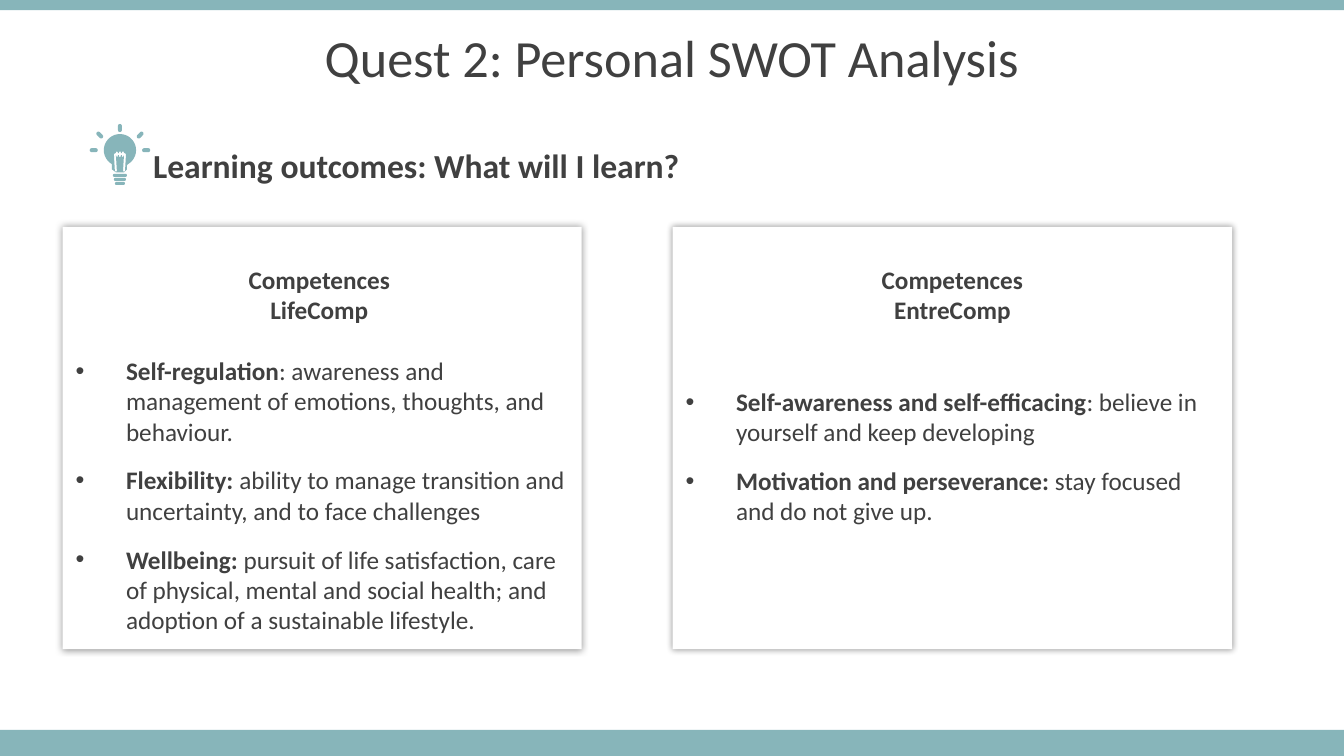
"""Build the learning outcomes slide of the personal SWOT analysis quest."""
from math import cos, radians, sin

from lxml.etree import SubElement
from pptx import Presentation
from pptx.dml.color import RGBColor
from pptx.enum.shapes import MSO_SHAPE as Preset
from pptx.enum.text import MSO_ANCHOR as Anchor, PP_ALIGN as Align
from pptx.oxml.ns import qn
from pptx.util import Inches, Pt

TEAL = RGBColor(0x87, 0xB5, 0xBA)
INK = RGBColor(0x40, 0x40, 0x40)
WHITE = RGBColor(0xFF, 0xFF, 0xFF)

LIFE_COMP = [
    ("Self-regulation", ": awareness and management of emotions, thoughts, and behaviour."),
    ("Flexibility: ", "ability to manage transition and uncertainty, and to face challenges"),
    ("Wellbeing: ", "pursuit of life satisfaction, care of physical, mental and social health; "
                    "and adoption of a sustainable lifestyle."),
]
ENTRE_COMP = [
    ("Self-awareness and self-efficacing", ": believe in yourself and keep developing"),
    ("Motivation and perseverance: ", "stay focused and do not give up."),
]

RAYS = [(0.93, 1.49, 0), (1.45, 1.49, 0), (1.19, 1.27, 90), (0.99, 1.34, 45), (1.39, 1.34, -45)]
SOCKET = [(1.74, 0.14), (1.78, 0.12), (1.82, 0.1)]
NECK = [(1.26, 1.64), (1.26, 1.68), (1.23, 1.71), (1.15, 1.71), (1.11, 1.68), (1.11, 1.64)]
FILAMENT = [
    (1.16, 1.5), (1.15, 1.51), (1.15, 1.52), (1.14, 1.52), (1.13, 1.53), (1.14, 1.7),
    (1.15, 1.7), (1.16, 1.7), (1.15, 1.54), (1.16, 1.56), (1.17, 1.55), (1.17, 1.54),
    (1.18, 1.54), (1.18, 1.55), (1.19, 1.56), (1.2, 1.55), (1.2, 1.54), (1.21, 1.54),
    (1.21, 1.55), (1.22, 1.56), (1.23, 1.54), (1.22, 1.7), (1.23, 1.7), (1.24, 1.7),
    (1.25, 1.53), (1.24, 1.52), (1.23, 1.52), (1.23, 1.51), (1.22, 1.5), (1.21, 1.51),
    (1.21, 1.52), (1.2, 1.52), (1.2, 1.51), (1.19, 1.5), (1.18, 1.51), (1.18, 1.52),
    (1.17, 1.52), (1.17, 1.51),
]


def arc(x, y, radius, start, end, step):
    return [(x + radius * cos(radians(a)), y + radius * sin(radians(a)))
            for a in range(start, end + 1, step)]


def capsule(x, y, length, thickness, angle):
    reach, radius = (length - thickness) / 2, thickness / 2
    dx, dy = reach * cos(radians(angle)), reach * sin(radians(angle))
    return (arc(x + dx, y + dy, radius, angle - 90, angle + 90, 30)
            + arc(x - dx, y - dy, radius, angle + 90, angle + 270, 30))


class QuestSlide:
    def __init__(self, slide):
        self.slide = slide
        self.font = "Calibri"

    def paint(self, shape, color):
        shape.shadow.inherit = False
        shape.fill.solid()
        shape.fill.fore_color.rgb = color
        shape.line.fill.background()
        return shape

    def block(self, left, top, width, height, color):
        block = self.slide.shapes.add_shape(
            Preset.RECTANGLE, Inches(left), Inches(top), Inches(width), Inches(height))
        return self.paint(block, color)

    def add_words(self, paragraph, text, size, bold=False):
        run = paragraph.add_run()
        run.text = text
        run.font.name, run.font.size, run.font.bold = self.font, Pt(size), bold
        run.font.color.rgb = INK

    def heading(self, left, top, width, height, text, size, before, bold=False):
        frame = self.slide.shapes.add_textbox(
            Inches(left), Inches(top), Inches(width), Inches(height)).text_frame
        frame.word_wrap = True
        frame.vertical_anchor = Anchor.MIDDLE
        paragraph = frame.paragraphs[0]
        paragraph.space_before = Pt(before)
        self.add_words(paragraph, text, size, bold)
        return paragraph

    def bulb(self):
        contours = [capsule(x, y, 0.08, 0.04, angle) for x, y, angle in RAYS]
        contours += [capsule(1.19, y, width, 0.03, 0) for y, width in SOCKET]
        contours += [arc(1.19, 1.49, 0.16, 120, 420, 10) + NECK, FILAMENT]
        outlines = [[(Inches(x), Inches(y)) for x, y in contour] for contour in contours]
        builder = self.slide.shapes.build_freeform(*outlines[0][0])
        for index, outline in enumerate(outlines):
            if index:
                builder.move_to(*outline[0])
            builder.add_line_segments(outline[1:], close=True)
        self.paint(builder.convert_to_shape(), TEAL)

    def halo(self, shape):
        effects = shape._element.spPr.find(qn("a:effectLst"))
        shadow = SubElement(effects, qn("a:outerShdw"), blurRad=str(Pt(5)), dist="0",
                            dir="0", algn="ctr", rotWithShape="0")
        black = SubElement(shadow, qn("a:srgbClr"), val="000000")
        SubElement(black, qn("a:alpha"), val="40000")

    def bullet(self, paragraph):
        props = paragraph._p.get_or_add_pPr()
        props.set("marL", str(Inches(0.5)))
        props.set("indent", str(Inches(-0.5)))
        SubElement(props, qn("a:buFont"), typeface="Arial")
        SubElement(props, qn("a:buChar"), char="•")

    def competences(self, left, width, titles, gap, outcomes):
        card = self.block(left, 2.25, width, 4.19, WHITE)
        self.halo(card)
        frame = card.text_frame
        frame.word_wrap = True
        frame.vertical_anchor = Anchor.TOP
        frame.margin_left = frame.margin_right = Inches(0.13)
        frame.margin_top, frame.margin_bottom = Inches(0.37), Inches(0.07)
        for index, title in enumerate(titles):
            paragraph = frame.add_paragraph() if index else frame.paragraphs[0]
            paragraph.alignment = Align.CENTER
            self.add_words(paragraph, title, 18, bold=True)
        paragraph.space_after = Pt(gap)
        for term, meaning in outcomes:
            paragraph = frame.add_paragraph()
            paragraph.alignment = Align.LEFT
            paragraph.space_after = Pt(13.3)
            self.bullet(paragraph)
            self.add_words(paragraph, term, 18, bold=True)
            self.add_words(paragraph, meaning, 18)


def main():
    deck = Presentation()
    deck.slide_width, deck.slide_height = Inches(13.33), Inches(7.5)
    quest = QuestSlide(deck.slides.add_slide(deck.slide_layouts[6]))
    quest.block(0, 7.24, 13.33, 0.26, TEAL)
    quest.block(0, 0, 13.33, 0.1, TEAL)
    title = quest.heading(0, 0.18, 13.33, 0.84, "Quest 2: Personal SWOT Analysis", 37.3, 10)
    title.alignment = Align.CENTER
    title.line_spacing = 0.9
    quest.bulb()
    quest.competences(0.62, 5.15, ["Competences ", "LifeComp "], 22, LIFE_COMP)
    quest.heading(1.42, 1.43, 6.51, 0.41, "Learning outcomes: What will I learn?", 24, 4.8, True)
    quest.competences(6.67, 5.55, ["Competences", "EntreComp"], 44, ENTRE_COMP)
    deck.save("out.pptx")


if __name__ == "__main__":
    main()
